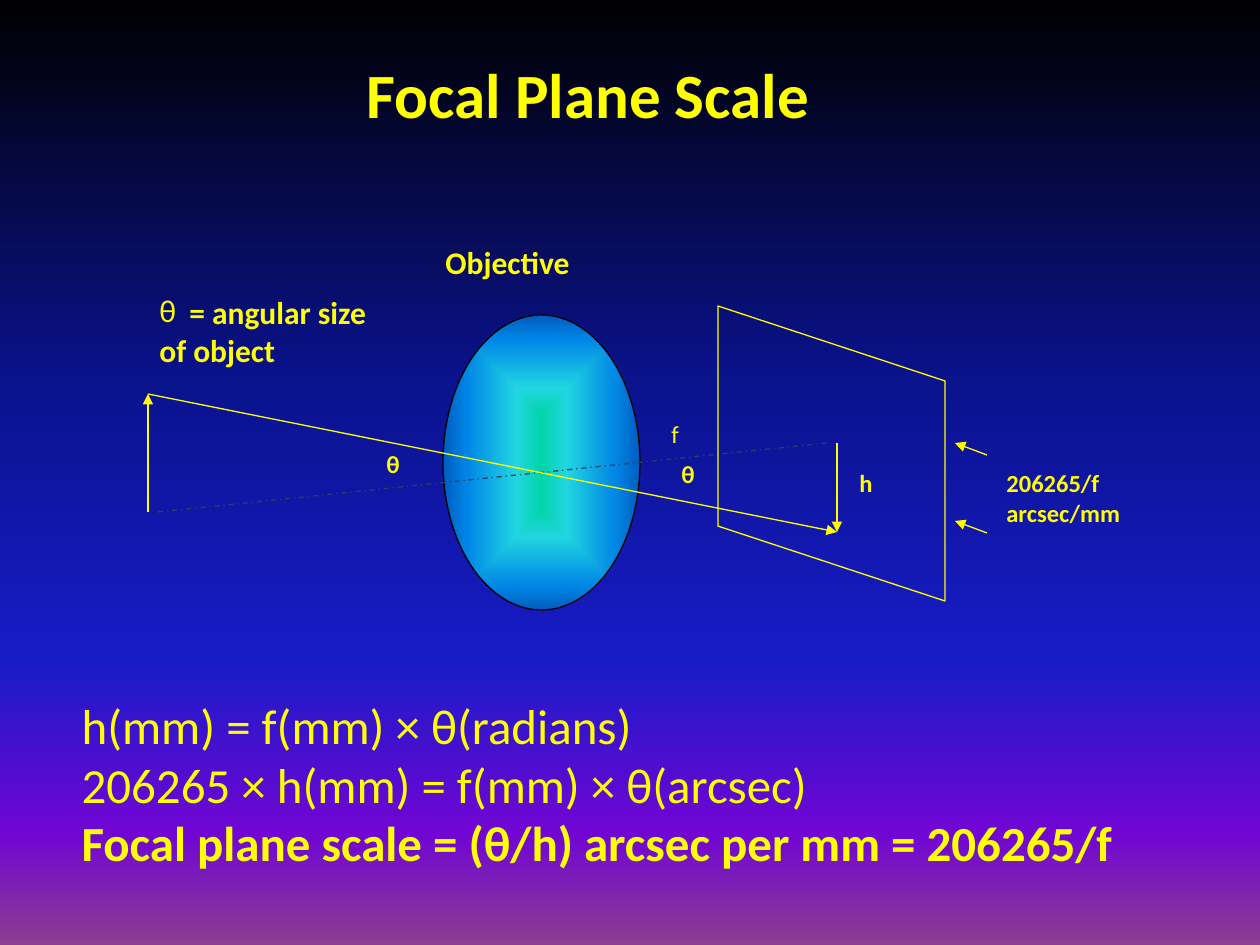
import lxml.etree
import pptx
import pptx.dml.color
import pptx.enum.dml
import pptx.enum.shapes
import pptx.enum.text
import pptx.oxml
import pptx.oxml.ns
import pptx.util

EMU_PER_PX = 914400 / 126
FONT = "Calibri"
COLORS = {"yellow": "FFFF00", "axis": "254061", "outline": "000000"}
SKY_STOPS = {0: "000000", 40: "0A128C", 70: "181CC7", 88: "7005D4", 100: "8C3D91"}
LENS_STOPS = {0: "03D4A8", 25: "21D6E0", 75: "0087E6", 100: "005CBF"}
SKY_DIRECTION = '<a:lin ang="5400000" scaled="0"/>'
LENS_DIRECTION = ('<a:path path="shape"><a:fillToRect l="50000" t="50000" '
                  'r="50000" b="50000"/></a:path>')


def px(*lengths):
    """Turn pixel lengths into EMU."""
    return [pptx.util.Emu(round(length * EMU_PER_PX)) for length in lengths]


def rgb(name):
    """Look up a named colour."""
    return pptx.dml.color.RGBColor.from_string(COLORS[name])


def add_child(parent, tag, **attributes):
    """Append a drawing element with the given attributes."""
    child = lxml.etree.SubElement(parent, pptx.oxml.ns.qn(tag))
    for key, value in attributes.items():
        child.set(key, value)
    return child


def set_gradient(gradient, stops, direction):
    """Give a gradient element its stops and direction."""
    for child in list(gradient):
        gradient.remove(child)
    stop_list = add_child(gradient, "a:gsLst")
    for percent, color in stops.items():
        stop = add_child(stop_list, "a:gs", pos=str(percent * 1000))
        add_child(stop, "a:srgbClr", val=color)
    namespace = pptx.oxml.ns.nsdecls("a")
    gradient.append(pptx.oxml.parse_xml(direction.replace(" ", f" {namespace} ", 1)
                                        if direction.startswith("<a:lin")
                                        else direction.replace("<a:path", f"<a:path {namespace}", 1)))


def style_line(line, color):
    """Set a thin line in a named colour."""
    line.color.rgb = rgb(color)
    line.width = pptx.util.Pt(0.75)


def add_line(slide, start, end, color="yellow", arrow=True):
    """Draw a ray, arrow or axis between two points."""
    connector = slide.shapes.add_connector(
        pptx.enum.shapes.MSO_CONNECTOR.STRAIGHT, *px(*start, *end))
    style_line(connector.line, color)
    if arrow:
        add_child(connector.line._get_or_add_ln(), "a:tailEnd", type="triangle")
    else:
        connector.line.dash_style = pptx.enum.dml.MSO_LINE.DASH_DOT
    add_child(connector._element.spPr, "a:effectLst")


def add_lens(slide, box):
    """Draw the objective lens with its gradient."""
    lens = slide.shapes.add_shape(pptx.enum.shapes.MSO_SHAPE.OVAL, *px(*box))
    lens.shadow.inherit = False
    lens.fill.gradient()
    set_gradient(lens._element.xpath("./p:spPr/a:gradFill")[0], LENS_STOPS, LENS_DIRECTION)
    style_line(lens.line, "outline")


def add_focal_plane(slide, box):
    """Draw the outline of the tilted focal plane."""
    plane = slide.shapes.add_shape(pptx.enum.shapes.MSO_SHAPE.PARALLELOGRAM, *px(*box))
    plane.adjustments[0] = 0.33
    plane.rotation = 270
    plane.shadow.inherit = False
    plane.fill.background()
    style_line(plane.line, "yellow")


def format_text(paragraph, size, bold):
    """Left-align a paragraph and set its font."""
    paragraph.alignment = pptx.enum.text.PP_ALIGN.LEFT
    for run in paragraph.runs:
        run.font.name = FONT
        run.font.size = pptx.util.Pt(size)
        run.font.bold = bold
        run.font.color.rgb = rgb("yellow")


def add_label(slide, text, box, size=14, bold=True, wrap=False):
    """Add a label in a text box."""
    label = slide.shapes.add_textbox(*px(*box))
    frame = label.text_frame
    frame.word_wrap = wrap
    frame.text = text
    for paragraph in frame.paragraphs:
        format_text(paragraph, size, bold)
    return label


def fill_placeholder(holder, box, lines, size):
    """Move a placeholder and set its plain lines, each with its weight."""
    holder.left, holder.top, holder.width, holder.height = px(*box)
    frame = holder.text_frame
    frame.text = "\n".join(text for text, _ in lines)
    frame.word_wrap = False
    frame.auto_size = pptx.enum.text.MSO_AUTO_SIZE.NONE
    frame.vertical_anchor = pptx.enum.text.MSO_ANCHOR.TOP
    for paragraph, (_, bold) in zip(frame.paragraphs, lines):
        properties = paragraph._p.get_or_add_pPr()
        properties.set("marL", "0")
        properties.set("indent", "0")
        add_child(properties, "a:buNone")
        paragraph.space_before = pptx.util.Pt(0)
        format_text(paragraph, size, bold)


def add_theta_bullet(paragraph, indent):
    """Use theta as the bullet of a paragraph."""
    properties = paragraph._p.get_or_add_pPr()
    properties.set("marL", str(px(indent)[0]))
    properties.set("indent", str(-px(indent)[0]))
    add_child(properties, "a:buFont", typeface=FONT)
    add_child(properties, "a:buChar", char="θ")


def main():
    """Build the focal plane scale slide."""
    presentation = pptx.Presentation()
    presentation.slide_width, presentation.slide_height = px(1260, 945)
    slide = presentation.slides.add_slide(presentation.slide_layouts[1])
    slide.background.fill.gradient()
    set_gradient(slide._element.xpath("./p:cSld/p:bg//a:gradFill")[0], SKY_STOPS, SKY_DIRECTION)

    title, formulas = slide.placeholders
    fill_placeholder(title, (354, 49, 473, 89), [("Focal Plane Scale", True)], 36)
    fill_placeholder(formulas, (69, 689, 1068, 229), [
        ("h(mm) = f(mm) × θ(radians)", False),
        ("206265 × h(mm) = f(mm) × θ(arcsec)", False),
        ("Focal plane scale = (θ/h) arcsec per mm = 206265/f", True),
    ], 28)

    add_lens(slide, (443, 315, 197, 295))
    add_line(slide, (158, 512), (827, 443), "axis", arrow=False)
    add_focal_plane(slide, (684, 340, 295, 227))
    object_tip, image_tip = (148, 394), (837, 532)
    add_line(slide, (148, 512), object_tip)
    add_line(slide, (837, 443), image_tip)
    add_line(slide, object_tip, image_tip)
    for arrow_y in (443, 521):
        add_line(slide, (987, arrow_y + 12), (955, arrow_y))

    add_label(slide, "f", (659, 413, 39, 39), bold=False, wrap=True)
    add_label(slide, "206265/f arcsec/mm", (994, 462, 148, 126), wrap=True)
    add_label(slide, "h", (847, 462, 40, 42))
    for theta_box in ((374, 443, 38, 42), (669, 453, 38, 42)):
        add_label(slide, "θ", theta_box)
    add_label(slide, "Objective", (433, 237, 169, 50), size=18)
    angular_size = add_label(slide, "= angular size\nof object", (147, 287, 253, 89), size=18)
    add_theta_bullet(angular_size.text_frame.paragraphs[0], 30)

    presentation.save("out.pptx")


if __name__ == "__main__":
    main()
